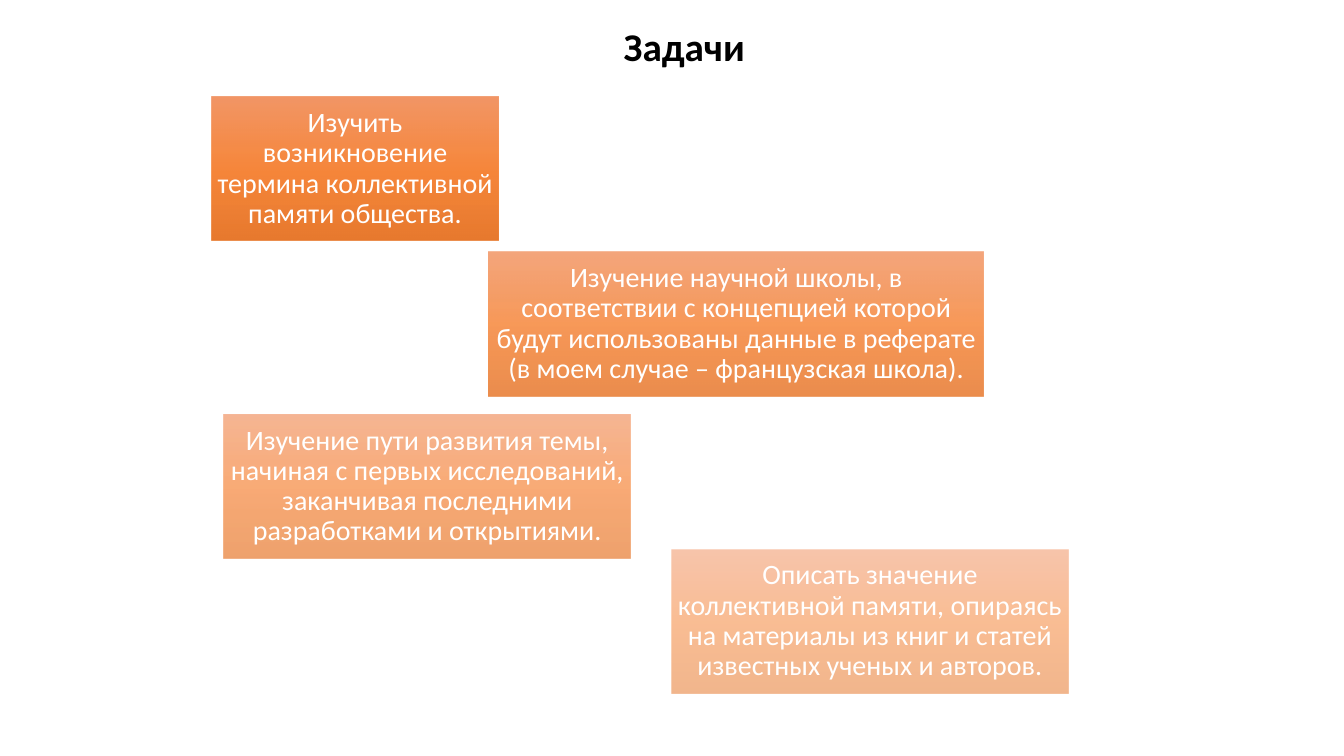
from lxml.etree import SubElement
from pptx import Presentation
from pptx.dml.color import RGBColor
from pptx.enum.shapes import MSO_SHAPE as Shape
from pptx.enum.text import MSO_ANCHOR as Anchor, PP_ALIGN as Align
from pptx.oxml.ns import qn
from pptx.util import Cm, Pt

FONT = "Calibri"
ORANGE_STOPS = [(0, "F18C57"), (50, "F67B28"), (100, "E56C19")]
TASK_HEIGHT = 3.63
TASK_INSET = 0.15

# Each task: left, top, width in cm, opacity in percent, text
TASKS = [
    (5.33, 2.44, 7.24, 90,
     "Изучить возникновение термина коллективной памяти общества."),
    (12.32, 6.35, 12.47, 77,
     "Изучение научной школы, в соответствии с концепцией которой будут "
     "использованы данные в реферате (в моем случае – французская школа)."),
    (5.64, 10.44, 10.26, 63,
     "Изучение пути развития темы, начиная с первых исследований, "
     "заканчивая последними разработками и открытиями."),
    (16.92, 13.84, 10.01, 50,
     "Описать значение коллективной памяти, опираясь на материалы из книг "
     "и статей известных ученых и авторов."),
]


def write_text(frame, text, size, color, bold=False):
    """Put one centred paragraph into a wrapping text frame."""
    frame.word_wrap = True
    para = frame.paragraphs[0]
    para.text = text
    para.alignment = Align.CENTER
    font = para.font
    font.name, font.size, font.bold = FONT, Pt(size), bold
    font.color.rgb = RGBColor.from_string(color)
    return para


def fill_gradient(shape, stops, opacity):
    """Fill a shape from top to bottom with translucent colour stops."""
    shape.fill.gradient()
    shape.fill.gradient_angle = 270
    stop_list = next(shape.element.iter(qn("a:gsLst")))
    stop_list.clear()
    for position, color in stops:
        stop = SubElement(stop_list, qn("a:gs"), pos=str(position * 1000))
        tint = SubElement(stop, qn("a:srgbClr"), val=color)
        SubElement(tint, qn("a:alpha"), val=str(opacity * 1000))


def add_title(page, text):
    box = page.shapes.add_textbox(Cm(10.54), Cm(0.43), Cm(13.41), Cm(1.45))
    write_text(box.text_frame, text, 28, "000000", bold=True)


def add_task(page, left, top, width, opacity, text):
    box = page.shapes.add_shape(
        Shape.RECTANGLE, Cm(left), Cm(top), Cm(width), Cm(TASK_HEIGHT))
    box.shadow.inherit = False
    box.line.fill.background()
    fill_gradient(box, ORANGE_STOPS, opacity)
    frame = box.text_frame
    frame.vertical_anchor = Anchor.MIDDLE
    frame.margin_left = frame.margin_right = Cm(TASK_INSET)
    frame.margin_top = frame.margin_bottom = Cm(TASK_INSET)
    para = write_text(frame, text, 20, "FFFFFF")
    para.line_spacing = 0.9


def main():
    deck = Presentation()
    deck.slide_width, deck.slide_height = Cm(33.87), Cm(19.05)
    page = deck.slides.add_slide(deck.slide_layouts[6])

    # Heading
    add_title(page, "Задачи")

    # Staggered tasks, fading from first to last
    for task in TASKS:
        add_task(page, *task)

    deck.save("out.pptx")


if __name__ == "__main__":
    main()
